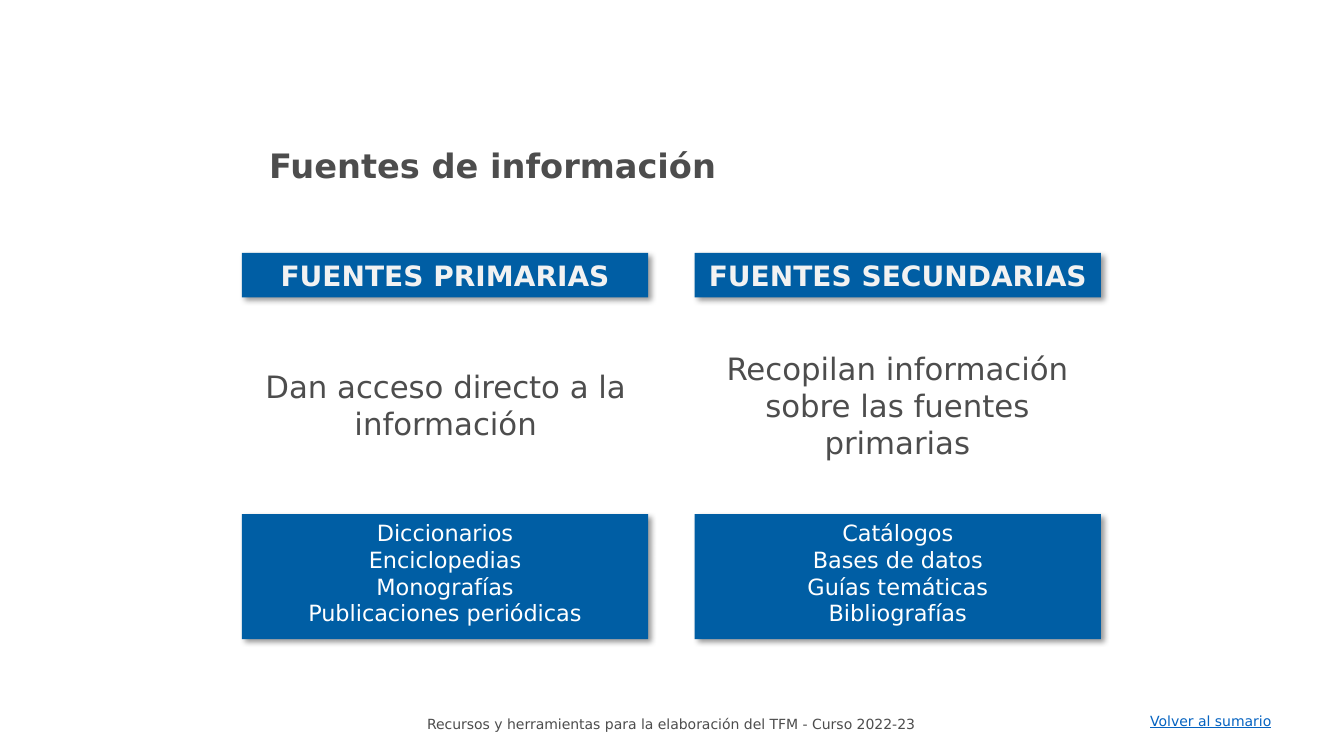
"""Build the slide about primary and secondary sources."""
import dataclasses
import typing

import lxml.etree
import pptx
import pptx.dml.color
import pptx.enum.shapes
import pptx.enum.text
import pptx.oxml.ns
import pptx.util

SCALE = 9144
FONT = "DejaVu Sans"
BLUE, GREY, LIGHT, WHITE, LINK = "005EA4", "4D4D4D", "F2F2F2", "FFFFFF", "0563C1"
ALIGN = pptx.enum.text.PP_ALIGN
ANCHOR = pptx.enum.text.MSO_ANCHOR


@dataclasses.dataclass(frozen=True)
class Box:
    left: int
    top: int
    width: int
    height: int

    def emu(self) -> list[int]:
        return [side * SCALE for side in dataclasses.astuple(self)]


@dataclasses.dataclass(frozen=True)
class Column:
    left: int
    head: str
    about: str
    place: Box
    items: tuple[str, ...]


COLUMNS = (
    Column(240, "FUENTES PRIMARIAS", "Dan acceso directo a la información",
           Box(249, 360, 386, 84),
           ("Diccionarios", "Enciclopedias", "Monografías", "Publicaciones periódicas")),
    Column(689, "FUENTES SECUNDARIAS", "Recopilan información sobre las fuentes primarias",
           Box(701, 342, 378, 121),
           ("Catálogos", "Bases de datos", "Guías temáticas", "Bibliografías")),
)


def color(code: str) -> pptx.dml.color.RGBColor:
    return pptx.dml.color.RGBColor.from_string(code)


def write(shape: typing.Any, *lines: str, size: int, ink: str = GREY, bold: bool = False,
          line: bool = False, align: ALIGN = ALIGN.CENTER, anchor: ANCHOR = ANCHOR.TOP,
          wrap: bool = True) -> None:
    frame = shape.text_frame
    frame.text = "\n".join(lines)
    frame.word_wrap = wrap
    frame.auto_size = pptx.enum.text.MSO_AUTO_SIZE.NONE
    frame.vertical_anchor = anchor
    for para in frame.paragraphs:
        para.alignment = align
        for run in para.runs:
            font = run.font
            font.name, font.size = FONT, pptx.util.Pt(size)
            font.bold, font.underline = bold, line
            font.color.rgb = color(ink)


def shade(shape: typing.Any) -> None:
    shape.shadow.inherit = False
    space = pptx.oxml.ns.qn
    effect = shape.element.spPr.find(space("a:effectLst"))
    outer = lxml.etree.SubElement(
        effect, space("a:outerShdw"), blurRad=str(pptx.util.Pt(4)),
        dist=str(pptx.util.Pt(3)), dir="2700000", algn="tl", rotWithShape="0")
    tint = lxml.etree.SubElement(outer, space("a:srgbClr"), val="000000")
    lxml.etree.SubElement(tint, space("a:alpha"), val="40000")


def panel(slide: typing.Any, box: Box) -> typing.Any:
    shape = slide.shapes.add_shape(pptx.enum.shapes.MSO_SHAPE.RECTANGLE, *box.emu())
    shape.fill.solid()
    shape.fill.fore_color.rgb = color(BLUE)
    shape.line.fill.background()
    shade(shape)
    return shape


def label(slide: typing.Any, box: Box) -> typing.Any:
    return slide.shapes.add_textbox(*box.emu())


def draw(slide: typing.Any, column: Column) -> None:
    write(panel(slide, Box(column.left, 251, 403, 44)), column.head,
          size=20, ink=LIGHT, bold=True, anchor=ANCHOR.MIDDLE)
    write(label(slide, column.place), column.about, size=22)
    write(panel(slide, Box(column.left, 510, 403, 124)), *column.items,
          size=16, ink=WHITE)


def main() -> None:
    deck = pptx.Presentation()
    deck.slide_width, deck.slide_height = 1333 * SCALE, 750 * SCALE
    slide = deck.slides.add_slide(deck.slide_layouts[5])
    title = slide.shapes.title
    title.left, title.top, title.width, title.height = Box(257, 139, 835, 50).emu()
    write(title, "Fuentes de información", size=24, bold=True, align=ALIGN.LEFT)
    for column in COLUMNS:
        draw(slide, column)
    write(label(slide, Box(268, 705, 795, 27)),
          "Recursos y herramientas para la elaboración del TFM - Curso 2022-23", size=10)
    write(label(slide, Box(1131, 702, 144, 27)), "Volver al sumario",
          size=10, ink=LINK, line=True, align=ALIGN.LEFT, wrap=False)
    deck.save("out.pptx")


if __name__ == "__main__":
    main()
